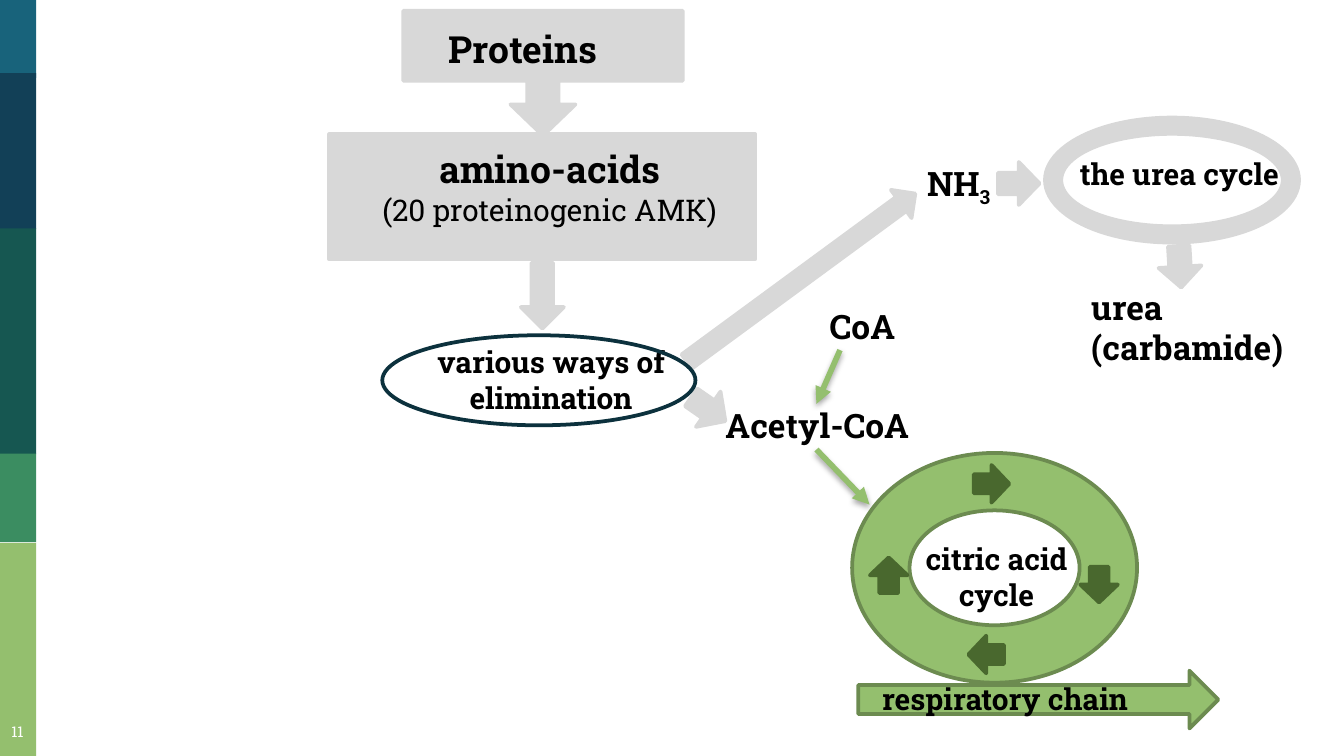
import pptx
import pptx.dml.color
import pptx.enum.shapes
import pptx.enum.text
import pptx.oxml
import pptx.oxml.ns
import pptx.util

PX = 4572
FONT = "Roboto Slab"
RGB = pptx.dml.color.RGBColor
SHAPE = pptx.enum.shapes.MSO_SHAPE
ALIGN = pptx.enum.text.PP_ALIGN
ANCHOR = pptx.enum.text.MSO_ANCHOR

BLACK = RGB(0x00, 0x00, 0x00)
WHITE = RGB(0xFF, 0xFF, 0xFF)
GREY = RGB(0xD8, 0xD8, 0xD8)
TEAL = RGB(0x18, 0x63, 0x7B)
NAVY = RGB(0x12, 0x40, 0x57)
PINE = RGB(0x16, 0x57, 0x51)
JADE = RGB(0x3B, 0x8D, 0x61)
LEAF = RGB(0x94, 0xBF, 0x6E)
MOSS = RGB(0x6C, 0x8B, 0x50)
FOREST = RGB(0x49, 0x68, 0x2E)
INK = RGB(0x0C, 0x31, 0x3D)

SHADOW = (
    '<a:effectLst %s><a:outerShdw blurRad="39370" dist="22860" dir="5400000" rotWithShape="0">'
    '<a:srgbClr val="000000"><a:alpha val="35000"/></a:srgbClr>'
    "</a:outerShdw></a:effectLst>" % pptx.oxml.ns.nsdecls("a")
)


def px(*lengths):
    return [length * PX for length in lengths]


def add_figure(shapes, kind, box, fill=None, line=None, turn=0, adjust=()):
    figure = shapes.add_shape(kind, *px(*box))
    figure.shadow.inherit = False
    figure.rotation = turn
    for index, value in enumerate(adjust):
        figure.adjustments[index] = value
    if fill is None:
        figure.fill.background()
    else:
        figure.fill.solid()
        figure.fill.fore_color.rgb = fill
    if line is None:
        figure.line.fill.background()
    else:
        figure.line.color.rgb = line
        figure.line.width = pptx.util.Pt(2)


def add_run(paragraph, text, size, bold=True, color=BLACK, baseline=0):
    run = paragraph.add_run()
    run.text = text
    run.font.name = FONT
    run.font.size = pptx.util.Pt(size)
    run.font.bold = bold
    run.font.color.rgb = color
    if baseline:
        run.font._element.set("baseline", str(baseline * 1000))


def add_text(shapes, text, box, size=16, bold=True, color=BLACK,
             align=ALIGN.CENTER, anchor=ANCHOR.TOP):
    frame = shapes.add_textbox(*px(*box)).text_frame
    frame.word_wrap = True
    frame.vertical_anchor = anchor
    paragraph = frame.paragraphs[0]
    paragraph.alignment = align
    add_run(paragraph, text, size, bold, color)
    return frame


def add_flow(shapes, start, end):
    flow = shapes.add_connector(
        pptx.enum.shapes.MSO_CONNECTOR.STRAIGHT, *px(*start, *end))
    flow.line.color.rgb = LEAF
    flow.line.width = pptx.util.Pt(3)
    flow.line._get_or_add_ln().append(pptx.oxml.parse_xml(
        '<a:tailEnd %s type="triangle"/>' % pptx.oxml.ns.nsdecls("a")))
    flow._element.spPr.append(pptx.oxml.parse_xml(SHADOW))


def add_sidebar(shapes):
    bands = [(0, 116, TEAL), (109, 232, NAVY), (340, 336, PINE),
             (675, 132, JADE), (808, 317, LEAF)]
    for top, height, color in bands:
        add_figure(shapes, SHAPE.RECTANGLE, (0, top, 54, height), color)


def add_breakdown(shapes):
    add_figure(shapes, SHAPE.FLOWCHART_PROCESS, (490, 200, 634, 186), GREY, GREY)
    add_text(shapes, "11", (-12, 1053, 76, 70), size=8, bold=False,
             color=WHITE, anchor=ANCHOR.MIDDLE)
    add_figure(shapes, SHAPE.DOWN_ARROW_CALLOUT, (600, 16, 416, 186), GREY, GREY,
               adjust=(0.25, 0.26, 0.25, 0.56))
    add_text(shapes, "Proteins", (604, 29, 348, 142), size=20)
    amino_acids = add_text(shapes, "amino-acids", (403, 208, 830, 208), size=20)
    proteinogenic = amino_acids.add_paragraph()
    proteinogenic.alignment = ALIGN.CENTER
    add_run(proteinogenic, "(20 proteinogenic AMK)", 16, bold=False)
    add_text(shapes, "various ways of elimination", (600, 502, 440, 128))
    add_figure(shapes, SHAPE.OVAL, (569, 499, 466, 134), line=INK)


def add_grey_arrows(shapes):
    arrows = [((775, 391, 64, 98), 0), ((1166, 202, 52, 422), 233.7),
              ((1022, 578, 64, 62), 304.8), ((1484, 242, 64, 62), 270),
              ((1724, 366, 64, 62), 356.6)]
    for box, turn in arrows:
        add_figure(shapes, SHAPE.DOWN_ARROW, box, GREY, GREY, turn)


def add_urea_cycle(shapes):
    ammonia = add_text(shapes, "NH", (1360, 232, 150, 80), size=18, align=ALIGN.LEFT)
    add_run(ammonia.paragraphs[0], "3", 18, baseline=-25)
    add_figure(shapes, SHAPE.DONUT, (1555, 175, 378, 186), GREY, GREY, adjust=(0.13,))
    add_text(shapes, "the urea cycle", (1569, 222, 372, 74))
    add_text(shapes, "urea (carbamide)", (1604, 417, 372, 142), size=18, align=ALIGN.LEFT)


def add_acetyl_path(shapes):
    add_text(shapes, "CoA", (1215, 446, 150, 80), size=18, align=ALIGN.LEFT)
    add_text(shapes, "Acetyl-CoA", (1060, 593, 372, 80), size=18, align=ALIGN.LEFT)
    add_flow(shapes, (1250, 521), (1215, 601))
    add_flow(shapes, (1215, 669), (1294, 751))


def add_citric_cycle(shapes):
    add_figure(shapes, SHAPE.DONUT, (1268, 674, 424, 342), LEAF, MOSS, adjust=(0.25,))
    add_figure(shapes, SHAPE.DOWN_ARROW, (1502, 773, 86, 536), LEAF, MOSS, 270)
    corners = [(1449, 692), (1609, 842), (1441, 946), (1296, 828)]
    for quarter, corner in enumerate(corners):
        add_figure(shapes, SHAPE.RIGHT_ARROW, (*corner, 53, 56), FOREST, FOREST,
                   90 * quarter)
    add_text(shapes, "citric acid cycle", (1323, 795, 320, 128))
    add_text(shapes, "respiratory chain", (1293, 1003, 468, 74), align=ALIGN.LEFT)


def main():
    deck = pptx.Presentation()
    deck.slide_width, deck.slide_height = px(2000, 1125)
    slide = deck.slides.add_slide(deck.slide_layouts[6])
    shapes = slide.shapes
    add_sidebar(shapes)
    add_grey_arrows(shapes)
    add_breakdown(shapes)
    add_acetyl_path(shapes)
    add_citric_cycle(shapes.add_group_shape().shapes)
    add_urea_cycle(shapes)
    deck.save("out.pptx")


if __name__ == "__main__":
    main()
